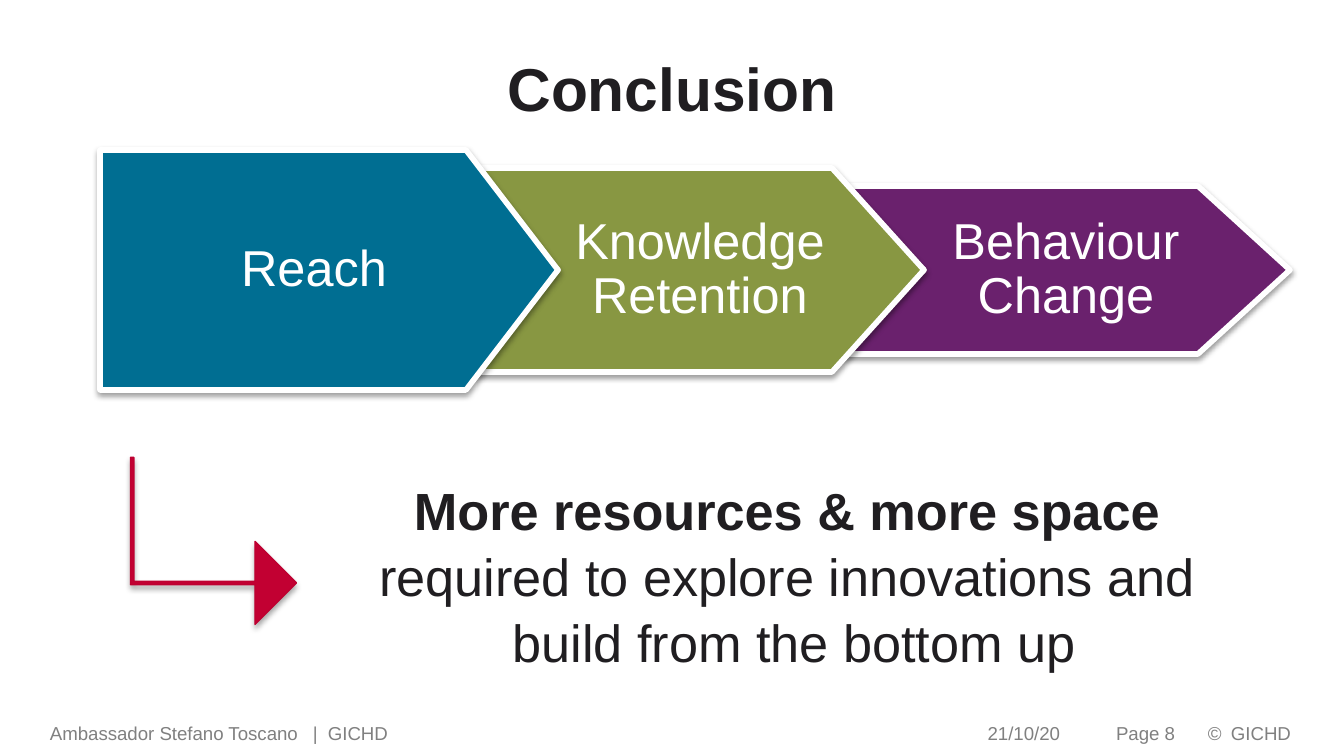
from lxml.etree import SubElement
from pptx import Presentation
from pptx.dml.color import RGBColor
from pptx.enum.shapes import MSO_SHAPE
from pptx.enum.text import MSO_ANCHOR, PP_ALIGN
from pptx.oxml.ns import qn
from pptx.util import Emu, Pt

SCALE = 914400 / 134.4


def px(*lengths):
    return [Emu(round(length * SCALE)) for length in lengths]


def paint(shape, fill, line, line_width, opacity, distance):
    shape.fill.solid()
    shape.fill.fore_color.rgb = RGBColor.from_string(fill)
    shape.line.color.rgb = RGBColor.from_string(line)
    shape.line.width = Pt(line_width)
    shape.shadow.inherit = False
    effects = shape._element.spPr.find(qn("a:effectLst"))
    shadow = SubElement(effects, qn("a:outerShdw"), blurRad=str(Pt(3.1)),
                        dist=str(Pt(distance)), dir="5400000", rotWithShape="0")
    black = SubElement(shadow, qn("a:srgbClr"), val="000000")
    SubElement(black, qn("a:alpha"), val=str(opacity * 1000))


deck = Presentation()
deck.slide_width, deck.slide_height = px(1344, 756)
slide = deck.slides.add_slide(deck.slide_layouts[5])

title = slide.shapes.title
title.left, title.top, title.width, title.height = px(63, 44, 1218, 80)
title.text_frame.text = "Conclusion"
title.text_frame.vertical_anchor = MSO_ANCHOR.BOTTOM
title.text_frame.margin_bottom = 0
heading = title.text_frame.paragraphs[0]
heading.alignment = PP_ALIGN.CENTER
heading.runs[0].font.name = "Arial"
heading.runs[0].font.size = Pt(32.4)
heading.runs[0].font.bold = True
heading.runs[0].font.color.rgb = RGBColor.from_string("201E21")

footers = [
    ("Page 8", 1074, 101, 13, 0, PP_ALIGN.RIGHT, []),
    ("Ambassador Stefano Toscano\t|\tGICHD", 50, 892, 0, 13, PP_ALIGN.LEFT, [263, 278]),
    ("21/10/20", 833, 227, 0, 0, PP_ALIGN.RIGHT, []),
    ("©\tGICHD", 1208, 125, 0, 13, PP_ALIGN.LEFT, [23]),
]
for wording, left, width, inset_left, inset_right, alignment, tab_stops in footers:
    footer = slide.shapes.add_textbox(*px(left, 715, width, 40)).text_frame
    footer.word_wrap = True
    footer.margin_left, footer.margin_right = px(inset_left, inset_right)
    footer.text = wording
    line = footer.paragraphs[0]
    line.alignment = alignment
    if tab_stops:
        tabs = SubElement(line._p.get_or_add_pPr(), qn("a:tabLst"))
        for stop in px(*tab_stops):
            SubElement(tabs, qn("a:tab"), pos=str(stop), algn="l")
    for run in line.runs:
        run.font.name = "Arial"
        run.font.size = Pt(10)
        run.font.color.rgb = RGBColor.from_string("808080")

STEP_PITCH, SHOULDER, TIP, NOTCH, MIDDLE = 366, 366, 458, 92, 270
steps = [("Reach", "006E92"), ("Knowledge Retention", "889742"),
         ("Behaviour Change", "6A216D")]
for index, (wording, colour) in reversed(list(enumerate(steps))):
    left = 100 + index * STEP_PITCH
    half = 120 - index * 18
    corners = [(left + SHOULDER, MIDDLE - half), (left + TIP, MIDDLE),
               (left + SHOULDER, MIDDLE + half), (left, MIDDLE + half)]
    if index:
        corners.append((left + NOTCH, MIDDLE))
    outline = slide.shapes.build_freeform(left, MIDDLE - half, scale=SCALE)
    outline.add_line_segments(corners, close=True)
    step = outline.convert_to_shape()
    paint(step, colour, "FFFFFF", 3, 38, 1.6)
    label = step.text_frame
    label.word_wrap = True
    label.vertical_anchor = MSO_ANCHOR.MIDDLE
    insets = (106, 11, 96, 11) if index else (21, 11, 51, 11)
    label.margin_left, label.margin_top, label.margin_right, label.margin_bottom = px(*insets)
    label.text = wording
    line = label.paragraphs[0]
    line.alignment = PP_ALIGN.CENTER
    line.line_spacing = 0.9
    line.runs[0].font.name = "Arial"
    line.runs[0].font.size = Pt(27)
    line.runs[0].font.color.rgb = RGBColor.from_string("FFFFFF")

bent_arrow = slide.shapes.add_shape(MSO_SHAPE.BENT_UP_ARROW, *px(130, 458, 167, 166))
bent_arrow.rotation = 90
bent_arrow.adjustments[0] = 0.02
bent_arrow.adjustments[1] = 0.25
bent_arrow.adjustments[2] = 0.25
paint(bent_arrow, "C20032", "BE0031", 0.75, 35, 1.8)

message = slide.shapes.add_textbox(*px(305, 469, 978, 203)).text_frame
message.word_wrap = True
message.text = ("More resources & more space \vrequired to explore innovations and "
                "\vbuild from the bottom up")
statement = message.paragraphs[0]
statement.alignment = PP_ALIGN.CENTER
statement.line_spacing = 1.05
for position, run in enumerate(statement.runs):
    run.font.name = "Arial"
    run.font.size = Pt(28)
    run.font.bold = position == 0
    run.font.color.rgb = RGBColor.from_string("201E21")

deck.save("out.pptx")
